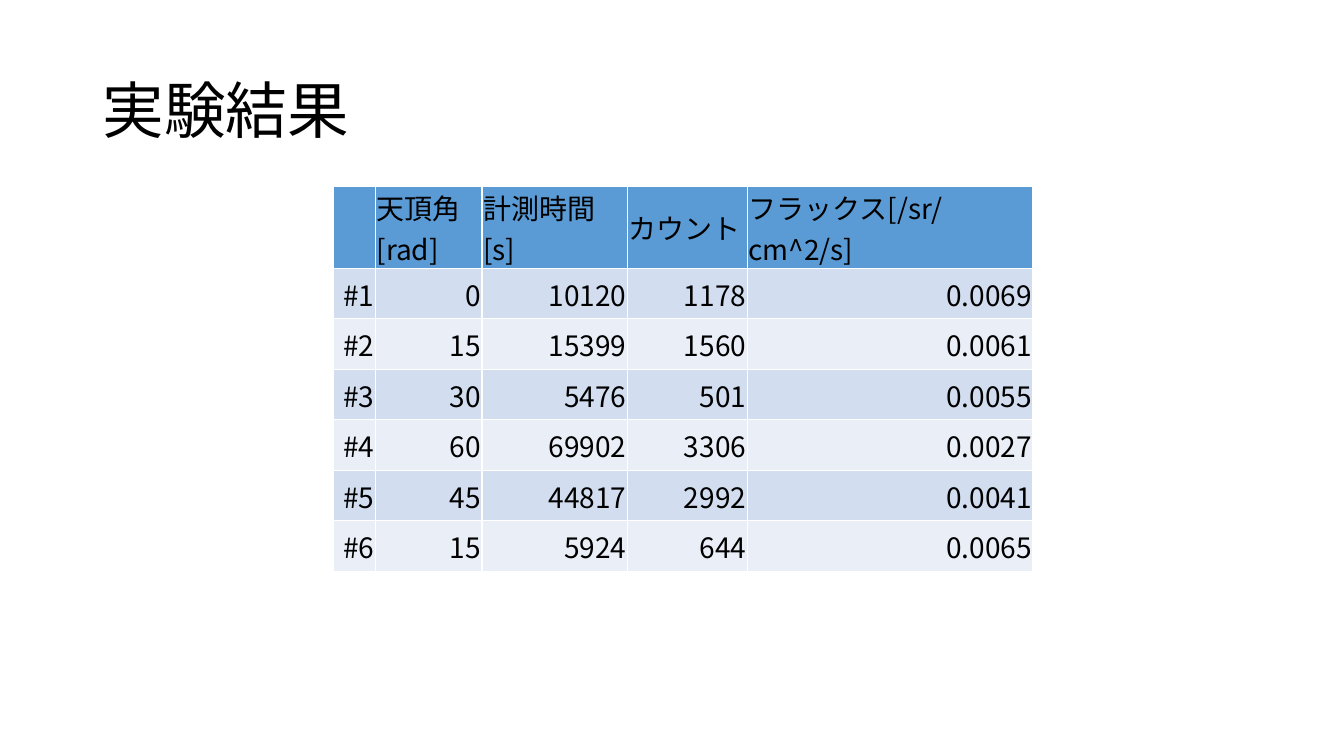
from pptx import Presentation
from pptx import util as u
from pptx.dml.color import RGBColor
from pptx.enum import text
from pptx.oxml.ns import qn
from lxml import etree

COLORS = {"text": "000000", "header": "5B9BD5", "odd": "D2DEEF", "even": "EAEFF7"}
JP_FONT = "Noto Sans CJK JP"


def format_run(r, size, font):
    for name, value in {"size": u.Pt(size), "name": font, "bold": False}.items():
        setattr(r.font, name, value)
    r.font.color.rgb = RGBColor.from_string(COLORS["text"])
    rPr = r.font._element
    rPr.set("lang", "ja-JP")
    ea = etree.Element(qn("a:ea"), typeface=JP_FONT)
    rPr.find(qn("a:latin")).addnext(ea)


prs = Presentation()
prs.slide_width, prs.slide_height = u.Pt(960), u.Pt(540)
s = prs.slides.add_slide(prs.slide_layouts[5])

# Title
title = s.shapes.title
for name, value in {"left": 66, "top": 28.75, "width": 828, "height": 104.4}.items():
    setattr(title, name, u.Pt(value))
tf = title.text_frame
tf.vertical_anchor = text.MSO_ANCHOR.MIDDLE
p = tf.paragraphs[0]
p.alignment = text.PP_ALIGN.LEFT
p.line_spacing = 0.9
r = p.add_run()
r.text = "実験結果"
format_run(r, 44, "Calibri")

# Results table
rows = [
    ["", "天頂角[rad]", "計測時間[s]", "カウント", "フラックス[/sr/cm^2/s]"],
    ["#1", "0", "10120", "1178", "0.0069"],
    ["#2", "15", "15399", "1560", "0.0061"],
    ["#3", "30", "5476", "501", "0.0055"],
    ["#4", "60", "69902", "3306", "0.0027"],
    ["#5", "45", "44817", "2992", "0.0041"],
    ["#6", "15", "5924", "644", "0.0065"],
]
widths = [30.5, 76, 104, 85.5, 204]
row_height = 36.1
table = s.shapes.add_table(
    len(rows), len(widths), u.Pt(237.8), u.Pt(132.8),
    u.Pt(sum(widths)), u.Pt(row_height * len(rows))).table
for column, width in zip(table.columns, widths):
    column.width = u.Pt(width)

cell_format = {
    "margin_left": u.Pt(0.75), "margin_right": u.Pt(0.75),
    "margin_top": u.Pt(0.75), "margin_bottom": 0,
    "vertical_anchor": text.MSO_ANCHOR.MIDDLE,
}
for i, row in enumerate(rows):
    table.rows[i].height = u.Pt(row_height)
    band = "header" if i == 0 else "odd" if i % 2 else "even"
    for j, value in enumerate(row):
        cell = table.cell(i, j)
        for name, setting in cell_format.items():
            setattr(cell, name, setting)
        cell.fill.solid()
        cell.fill.fore_color.rgb = RGBColor.from_string(COLORS[band])
        p = cell.text_frame.paragraphs[0]
        p.alignment = text.PP_ALIGN.RIGHT if i else text.PP_ALIGN.LEFT
        if value:
            r = p.add_run()
            r.text = value
            format_run(r, 20, JP_FONT)

prs.save("out.pptx")
